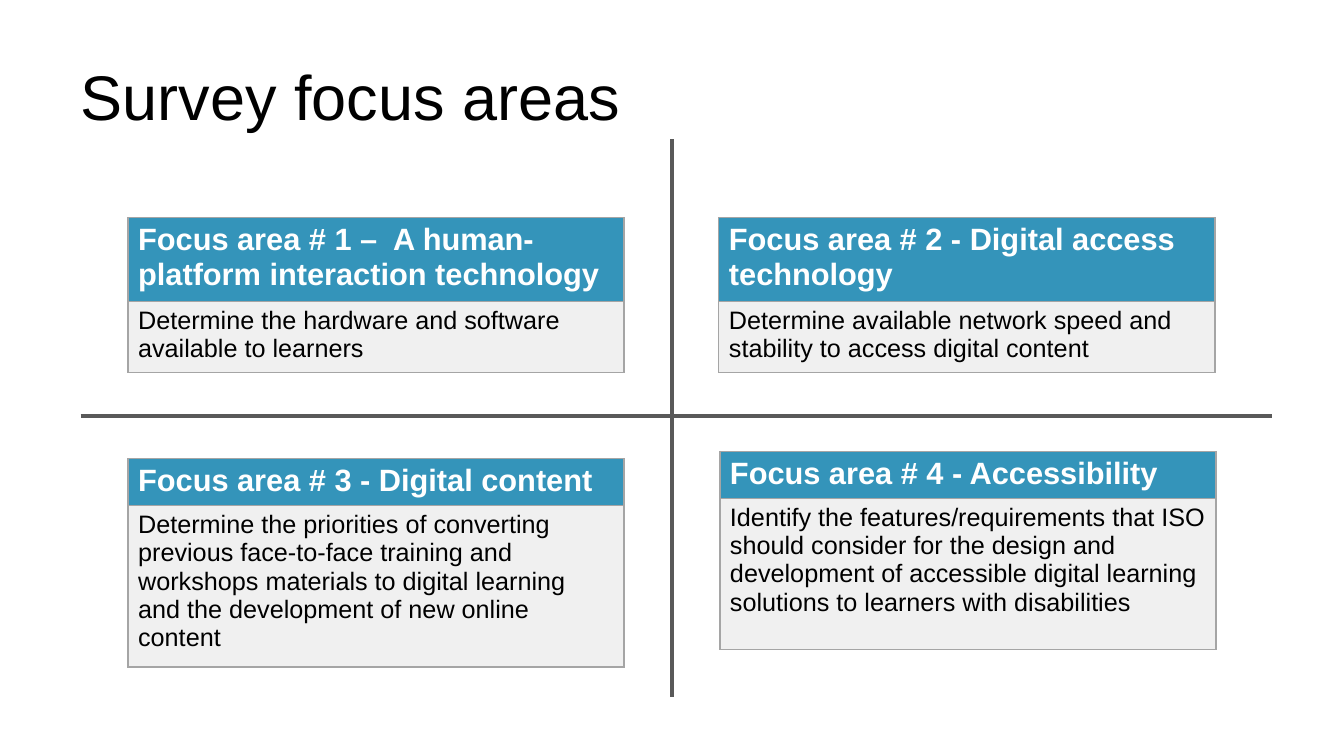
"""Build the survey focus areas slide."""
from dataclasses import dataclass

from lxml.etree import SubElement
from pptx import Presentation
from pptx.dml.color import RGBColor as Rgb
from pptx.enum.shapes import MSO_CONNECTOR as Connector
from pptx.enum.text import MSO_ANCHOR as Anchor, MSO_AUTO_SIZE as AutoSize, PP_ALIGN as Align
from pptx.oxml.ns import qn
from pptx.util import Inches, Pt

WIDTH, HEIGHT = 13.33, 7.5
LEFT, MIDDLE = 0.06 * WIDTH, 0.5 * WIDTH
CARD_WIDTH = 4.92
LEFT_COLUMN, RIGHT_COLUMN = 1.27, 7.13
TOP_ROW, BOTTOM_ROW = 2.16, 4.55
TOP_HEIGHTS, BOTTOM_HEIGHTS = (0.78, 0.66), (0.44, 1.5)


@dataclass(frozen=True)
class Theme:
    """Colours and type sizes of the slide."""
    font: str = "Arial"
    ink: str = "000000"
    light: str = "FFFFFF"
    header: str = "3494BA"
    body: str = "F0F0F0"
    border: str = "A5A5A5"
    axis: str = "595959"
    title_size: int = 45
    header_size: int = 22
    body_size: int = 18


THEME = Theme()

CARDS = [
    (LEFT_COLUMN, TOP_ROW, TOP_HEIGHTS,
     "Focus area # 1 –  A human-platform interaction technology",
     "Determine the hardware and software available to learners"),
    (RIGHT_COLUMN, TOP_ROW, TOP_HEIGHTS,
     "Focus area # 2 - Digital access technology",
     "Determine available network speed and stability to access digital content"),
    (LEFT_COLUMN, BOTTOM_ROW, BOTTOM_HEIGHTS,
     "Focus area # 3 - Digital content",
     "Determine the priorities of converting previous face-to-face training and "
     "workshops materials to digital learning and the development of new online content"),
    (RIGHT_COLUMN + 0.01, BOTTOM_ROW - 0.07, BOTTOM_HEIGHTS,
     "Focus area # 4 - Accessibility",
     "Identify the features/requirements that ISO should consider for the design and "
     "development of accessible digital learning solutions to learners with disabilities"),
]


def write(frame, text, size, color, bold=False):
    """Put one formatted paragraph in a text frame and return it."""
    frame.text = text
    para = frame.paragraphs[0]
    for span in para.runs:
        span.font.name = THEME.font
        span.font.size = Pt(size)
        span.font.bold = bold
        span.font.color.rgb = Rgb.from_string(color)
    return para


def set_title(slide, text):
    """Place and format the slide title."""
    box = slide.shapes.title
    box.left, box.top = Inches(LEFT), Inches(0.08 * HEIGHT)
    box.width, box.height = Inches(0.88 * WIDTH), Inches(0.78)
    frame = box.text_frame
    frame.margin_left = frame.margin_right = 0
    frame.word_wrap = True
    frame.vertical_anchor = Anchor.MIDDLE
    frame.auto_size = AutoSize.SHAPE_TO_FIT_TEXT
    para = write(frame, text, THEME.title_size, THEME.ink)
    para.alignment = Align.LEFT
    para.line_spacing = 0.9


def add_borders(cell):
    """Draw a thin line on every side of a table cell."""
    properties = cell._tc.get_or_add_tcPr()
    for side in ("a:lnL", "a:lnR", "a:lnT", "a:lnB"):
        line = SubElement(properties, qn(side), w=str(Pt(1)))
        fill = SubElement(line, qn("a:solidFill"))
        SubElement(fill, qn("a:srgbClr"), val=THEME.border)


def add_card(slide, left, top, heights, heading, detail):
    """Add a two-row table with a heading over its detail."""
    table = slide.shapes.add_table(
        2, 1, Inches(left), Inches(top), Inches(CARD_WIDTH), Inches(sum(heights))).table
    table.first_row = table.horz_banding = False
    styles = [
        (heading, THEME.header_size, THEME.light, True, THEME.header),
        (detail, THEME.body_size, THEME.ink, False, THEME.body),
    ]
    for row, height, (text, size, color, bold, fill) in zip(table.rows, heights, styles):
        row.height = Inches(height)
        cell = row.cells[0]
        add_borders(cell)
        cell.fill.solid()
        cell.fill.fore_color.rgb = Rgb.from_string(fill)
        write(cell.text_frame, text, size, color, bold)


def add_axis(slide, start, end):
    """Draw one dividing line between quadrants."""
    axis = slide.shapes.add_connector(
        Connector.STRAIGHT, *(Inches(value) for value in (*start, *end)))
    axis.line.color.rgb = Rgb.from_string(THEME.axis)
    axis.line.width = Pt(3)
    SubElement(axis._element.spPr, qn("a:effectLst"))


def main():
    """Build and save the deck."""
    deck = Presentation()
    deck.slide_width, deck.slide_height = Inches(WIDTH), Inches(HEIGHT)
    page = deck.slides.add_slide(deck.slide_layouts[5])
    set_title(page, "Survey focus areas")
    for card in CARDS:
        add_card(page, *card)
    add_axis(page, (LEFT, 0.55 * HEIGHT), (12.62, 0.55 * HEIGHT))
    add_axis(page, (MIDDLE, 1.38), (MIDDLE, 6.91))
    deck.save("out.pptx")


if __name__ == "__main__":
    main()
